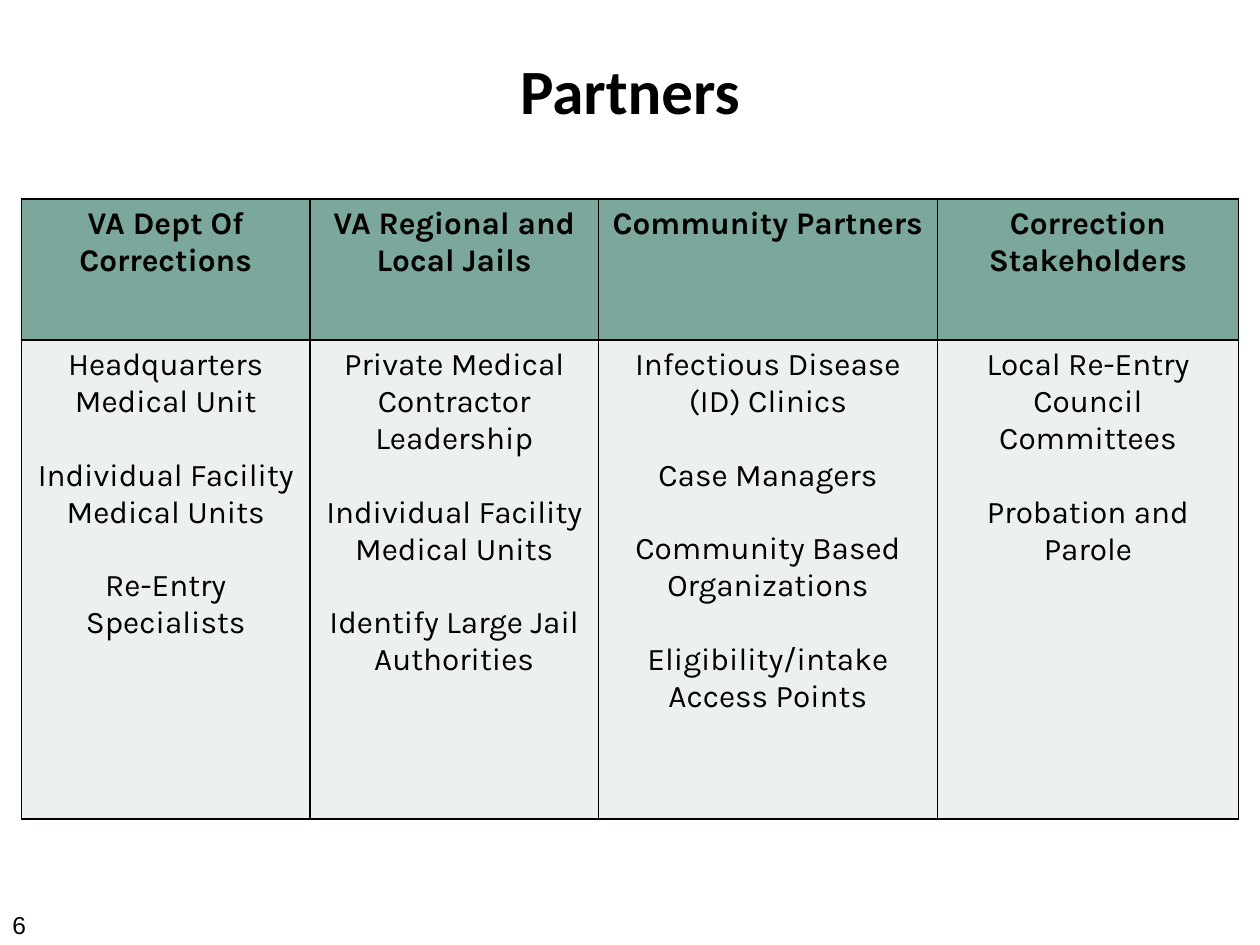
from lxml import etree
from pptx import Presentation
from pptx import util as u
from pptx.dml.color import RGBColor
from pptx.enum import text
from pptx.oxml.ns import qn

TITLE = "Partners"
PAGE = "6"
PARTNERS = [
    ("VA Dept Of Corrections", [
        "Headquarters Medical Unit",
        "Individual Facility Medical Units",
        "Re-Entry Specialists"]),
    ("VA Regional and Local Jails", [
        "Private Medical Contractor Leadership",
        "Individual Facility Medical Units",
        "Identify Large Jail Authorities"]),
    ("Community Partners", [
        "Infectious Disease (ID) Clinics",
        "Case Managers",
        "Community Based Organizations",
        "Eligibility/intake Access Points"]),
    ("Correction Stakeholders", [
        "Local Re-Entry Council Committees",
        "Probation and Parole"]),
]
COL_WIDTHS = [2.29, 2.29, 2.69, 2.39]
ROW_HEIGHTS = [1.12, 3.8]
LEFT, TOP = 0.17, 1.58

BLACK = RGBColor(0x00, 0x00, 0x00)
GREEN = RGBColor(0x7B, 0xA7, 0x9D)
PALE = RGBColor(0xEC, 0xF1, 0xEF)
LINE_GAP = u.Pt(21)  # one line of 18 pt Karla


def write(tf, lines, font, size, bold=False, align=text.PP_ALIGN.CENTER):
    tf.word_wrap = True
    for i, line in enumerate(lines):
        p = tf.add_paragraph() if i else tf.paragraphs[0]
        p.alignment = align
        if i:
            p.space_before = LINE_GAP
        r = p.add_run()
        r.text = line
        r.font.name, r.font.size, r.font.bold = font, u.Pt(size), bold
        r.font.color.rgb = BLACK


def add_borders(cell):
    tc_pr = cell._tc.get_or_add_tcPr()
    for side in ("lnL", "lnR", "lnT", "lnB"):
        ln = etree.SubElement(tc_pr, qn(f"a:{side}"), w=str(u.Pt(1)))
        fill = etree.SubElement(ln, qn("a:solidFill"))
        etree.SubElement(fill, qn("a:srgbClr"), val=str(BLACK))


def add_text(slide, box, *args, **kwargs):
    tf = slide.shapes.add_textbox(*map(u.Inches, box)).text_frame
    write(tf, *args, **kwargs)
    return tf


prs = Presentation()
prs.slide_width, prs.slide_height = u.Inches(10), u.Inches(7.5)
s = prs.slides.add_slide(prs.slide_layouts[6])

add_text(s, (0, 7.17, 2.33, 0.25), [PAGE], "Arial", 14,
         align=text.PP_ALIGN.LEFT)
title = add_text(s, (0.5, 0.08, 9, 1.25), [TITLE], "Calibri", 36, bold=True)
title.vertical_anchor = text.MSO_ANCHOR.MIDDLE

table = s.shapes.add_table(
    len(ROW_HEIGHTS), len(PARTNERS), u.Inches(LEFT), u.Inches(TOP),
    u.Inches(sum(COL_WIDTHS)), u.Inches(sum(ROW_HEIGHTS))).table
for row, height in zip(table.rows, ROW_HEIGHTS):
    row.height = u.Inches(height)
for c, (width, (heading, members)) in enumerate(zip(COL_WIDTHS, PARTNERS)):
    table.columns[c].width = u.Inches(width)
    for r, (lines, color) in enumerate([([heading], GREEN), (members, PALE)]):
        cell = table.cell(r, c)
        add_borders(cell)
        cell.fill.solid()
        cell.fill.fore_color.rgb = color
        write(cell.text_frame, lines, "Karla", 18, bold=r == 0)

prs.save("out.pptx")
